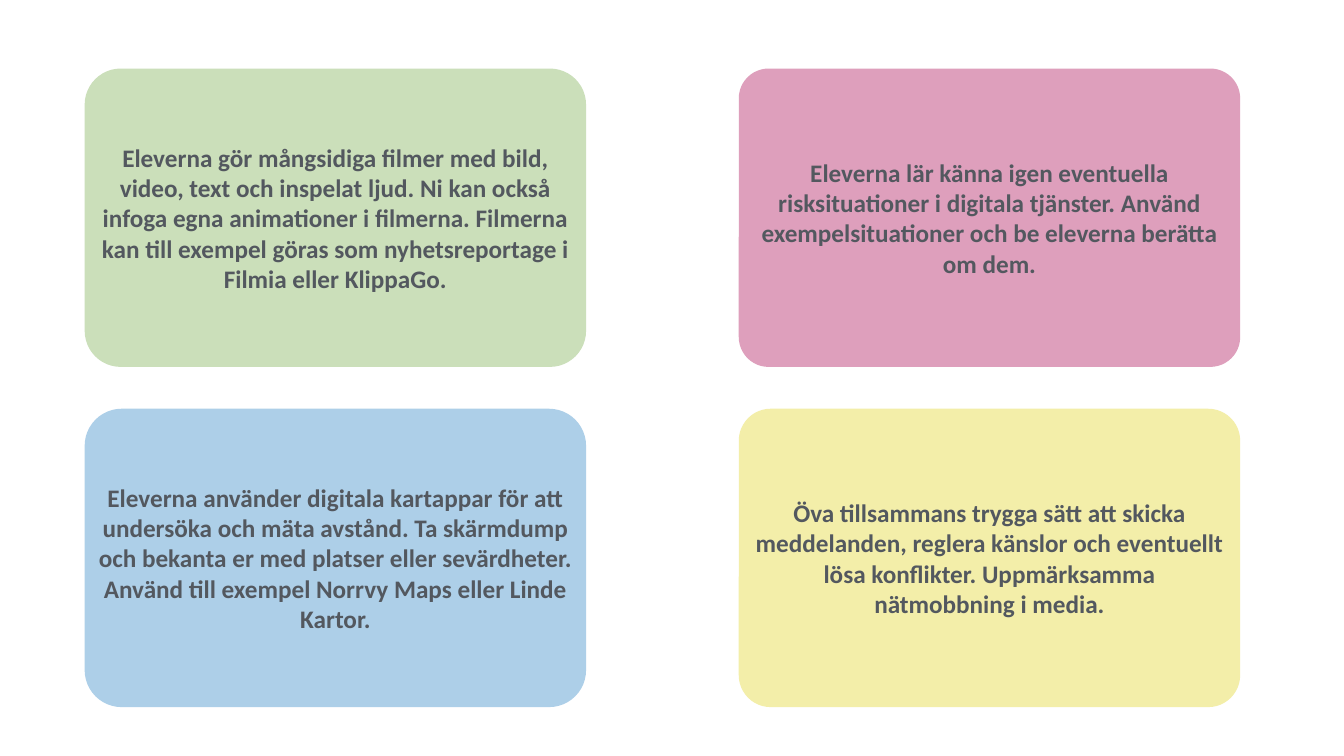
from pptx import Presentation
from pptx import util as u
from pptx.dml.color import RGBColor
from pptx.enum import shapes, text

COLORS = {
    "green": "CBDFBA",
    "blue": "ADCFE8",
    "yellow": "F3EEA9",
    "pink": "DE9FBC",
    "text": "53585F",
}

CARDS = [
    (0, 0, "green", 0.121,
     "Eleverna gör mångsidiga filmer med bild, video, text och inspelat ljud. "
     "Ni kan också infoga egna animationer i filmerna. Filmerna kan till exempel "
     "göras som nyhetsreportage i Filmia eller KlippaGo."),
    (0, 1, "blue", 0.124,
     "Eleverna använder digitala kartappar för att undersöka och mäta avstånd. "
     "Ta skärmdump och bekanta er med platser eller sevärdheter. "
     "Använd till exempel Norrvy Maps eller Linde Kartor."),
    (1, 1, "yellow", 0.107,
     "Öva tillsammans trygga sätt att skicka meddelanden, reglera känslor och "
     "eventuellt lösa konflikter. Uppmärksamma nätmobbning i media."),
    (1, 0, "pink", 0.1,
     "Eleverna lär känna igen eventuella risksituationer i digitala tjänster. "
     "Använd exempelsituationer och be eleverna berätta om dem."),
]

SLIDE_WIDTH, SLIDE_HEIGHT = 26.67, 15
LEFT, TOP = 1.68, 1.36
CARD_WIDTH, CARD_HEIGHT = 9.95, 5.92
COLUMN_STEP, ROW_STEP = 12.98, 6.75
INSET = u.Inches(0.06)


def add_card(page, column, row, color, rounding, wording):
    box = page.shapes.add_shape(
        shapes.MSO_SHAPE.ROUNDED_RECTANGLE,
        u.Inches(LEFT + column * COLUMN_STEP),
        u.Inches(TOP + row * ROW_STEP),
        u.Inches(CARD_WIDTH),
        u.Inches(CARD_HEIGHT),
    )
    box.adjustments[0] = rounding
    box.shadow.inherit = False
    box.fill.solid()
    box.fill.fore_color.rgb = RGBColor.from_string(COLORS[color])
    box.line.fill.background()

    frame = box.text_frame
    frame.word_wrap = True
    frame.vertical_anchor = text.MSO_ANCHOR.MIDDLE
    frame.margin_left = frame.margin_right = INSET
    frame.margin_top = frame.margin_bottom = INSET

    para = frame.paragraphs[0]
    para.text = wording
    para.alignment = text.PP_ALIGN.CENTER
    para.font.name = "Calibri"
    para.font.size = u.Pt(36)
    para.font.bold = True
    para.font.color.rgb = RGBColor.from_string(COLORS["text"])


def main():
    deck = Presentation()
    deck.slide_width = u.Inches(SLIDE_WIDTH)
    deck.slide_height = u.Inches(SLIDE_HEIGHT)
    page = deck.slides.add_slide(deck.slide_layouts[6])
    for card in CARDS:
        add_card(page, *card)
    deck.save("out.pptx")


if __name__ == "__main__":
    main()
